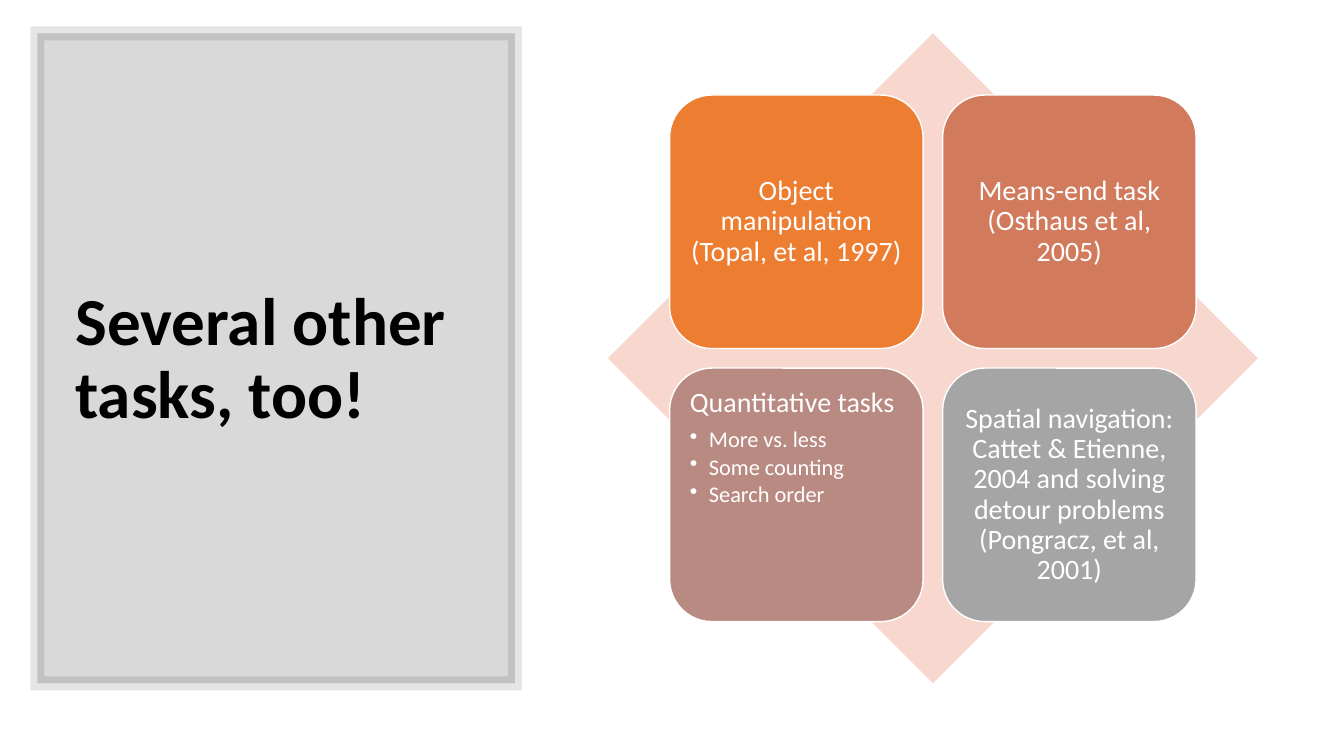
import lxml.etree
import pptx
import pptx.dml.color
import pptx.enum.shapes
import pptx.enum.text
import pptx.oxml.ns
import pptx.util

Cm = pptx.util.Cm
Pt = pptx.util.Pt
SHAPES = pptx.enum.shapes.MSO_SHAPE
ALIGN = pptx.enum.text.PP_ALIGN
ANCHOR = pptx.enum.text.MSO_ANCHOR
qn = pptx.oxml.ns.qn

TASKS = [
    ("ED7D31", "Object manipulation (Topal, et al, 1997)", []),
    ("D17B5C", "Means-end task (Osthaus et al, 2005)", []),
    ("B98A82", "Quantitative tasks", ["More vs. less", "Some counting", "Search order"]),
    ("A5A5A5", "Spatial navigation: Cattet & Etienne, 2004 and solving detour problems "
               "(Pongracz, et al, 2001)", []),
]


def color(hex_string):
    return pptx.dml.color.RGBColor.from_string(hex_string)


def set_alpha(fill_parent, percent):
    rgb = fill_parent.find(qn("a:solidFill")).find(qn("a:srgbClr"))
    lxml.etree.SubElement(rgb, qn("a:alpha"), val=str(percent * 1000))


def add_filled(slide, kind, box, fill, line=None, width=1):
    shape = slide.shapes.add_shape(kind, *[Cm(length) for length in box])
    shape.shadow.inherit = False
    shape.fill.solid()
    shape.fill.fore_color.rgb = color(fill)
    if line:
        shape.line.color.rgb = color(line)
        shape.line.width = Pt(width)
    else:
        shape.line.fill.background()
    return shape


def format_paragraph(paragraph, size, text_color, bold=False, space_after=0, align=ALIGN.LEFT):
    paragraph.alignment = align
    paragraph.line_spacing = 0.9
    paragraph.space_after = Pt(space_after)
    for run in paragraph.runs:
        run.font.name = "Calibri"
        run.font.size = Pt(size)
        run.font.bold = bold
        run.font.color.rgb = color(text_color)


def add_bullet(paragraph):
    properties = paragraph._p.get_or_add_pPr()
    indent = Cm(0.48)
    properties.set("marL", str(indent))
    properties.set("indent", str(-indent))
    lxml.etree.SubElement(properties, qn("a:buChar"), char="•")


def add_title_panel(slide, left, top, width, height):
    panel = add_filled(slide, SHAPES.RECTANGLE, (left, top, width, height), "000000", "000000", 10)
    set_alpha(panel._element.spPr, 15)
    outline = panel.line._get_or_add_ln()
    set_alpha(outline, 10)
    lxml.etree.SubElement(outline, qn("a:miter"), lim="800000")

    title_box = (left + 0.71, top + 0.94, width - 1.47, height - 1.77)
    title = slide.shapes.add_textbox(*[Cm(length) for length in title_box])
    frame = title.text_frame
    frame.word_wrap = True
    frame.vertical_anchor = ANCHOR.MIDDLE
    frame.text = "Several other tasks, too!"
    format_paragraph(frame.paragraphs[0], 48, "000000", bold=True)


def add_task_tile(slide, box, fill, heading, items):
    tile = add_filled(slide, SHAPES.ROUNDED_RECTANGLE, box, fill, "FFFFFF")
    frame = tile.text_frame
    frame.word_wrap = True
    frame.margin_left = frame.margin_right = frame.margin_top = frame.margin_bottom = Cm(0.2)
    frame.vertical_anchor = ANCHOR.TOP if items else ANCHOR.MIDDLE
    frame.text = heading
    format_paragraph(frame.paragraphs[0], 20, "FFFFFF", space_after=7,
                     align=ALIGN.LEFT if items else ALIGN.CENTER)
    for item in items:
        paragraph = frame.add_paragraph()
        paragraph.text = item
        paragraph.level = 1
        format_paragraph(paragraph, 16, "FFFFFF", space_after=2.4)
        add_bullet(paragraph)


def add_task_matrix(slide, left, top, side):
    add_filled(slide, SHAPES.DIAMOND, (left, top, side, side), "F8D7CE")
    tile, gap = side * 0.39, side * 0.03
    margin = (side - 2 * tile - gap) / 2
    for index, task in enumerate(TASKS):
        row, column = divmod(index, 2)
        box = (left + margin + column * (tile + gap), top + margin + row * (tile + gap), tile, tile)
        add_task_tile(slide, box, *task)


def main():
    presentation = pptx.Presentation()
    presentation.slide_width = Cm(33.87)
    presentation.slide_height = Cm(19.05)
    slide = presentation.slides.add_slide(presentation.slide_layouts[6])
    add_title_panel(slide, 0.94, 0.84, 12.04, 16.38)
    add_task_matrix(slide, 15.32, 0.84, 16.38)
    presentation.save("out.pptx")


if __name__ == "__main__":
    main()
